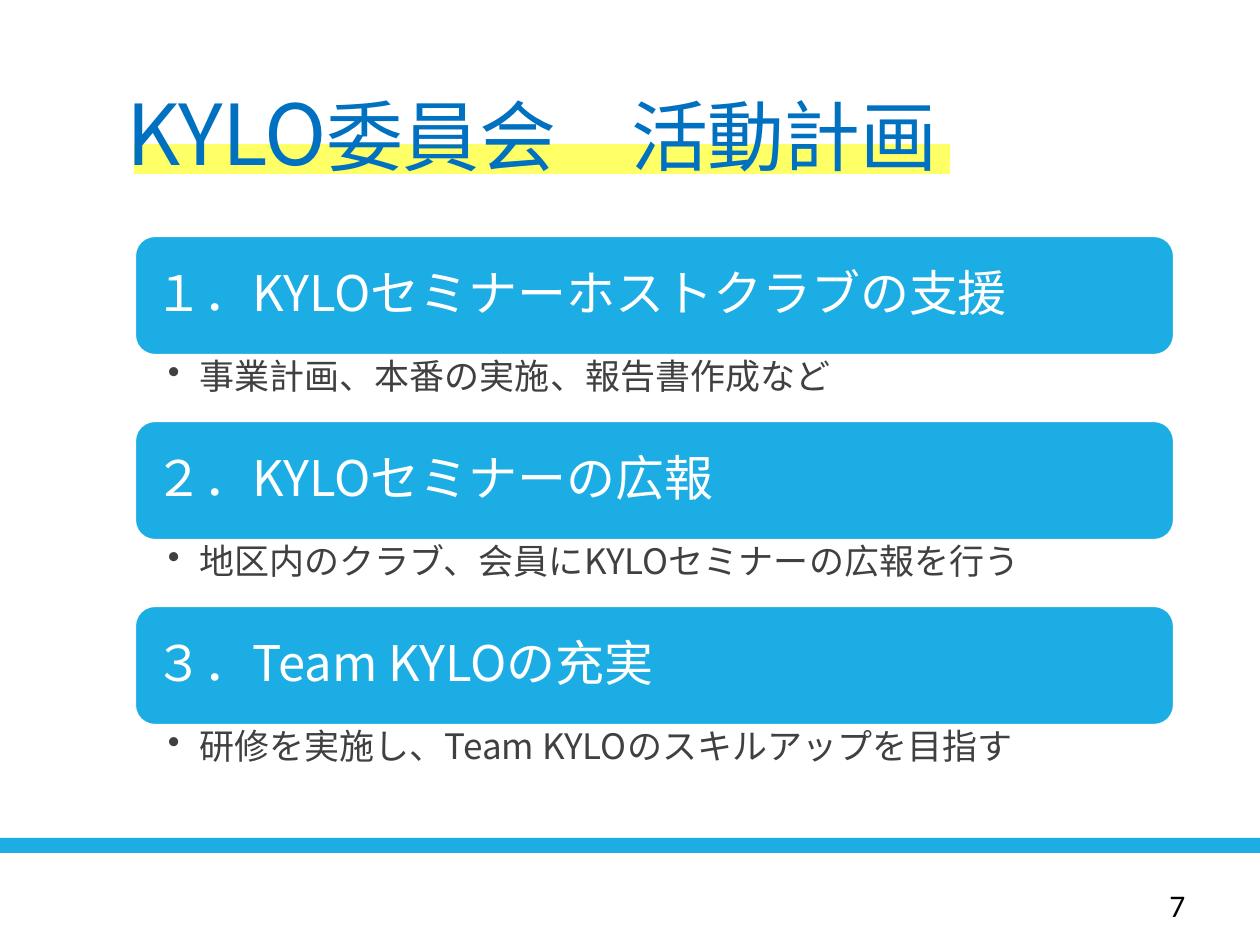
import pptx
import pptx.util
import pptx.dml.color
import pptx.enum.shapes
import pptx.enum.text
import pptx.oxml
import pptx.oxml.ns
import lxml.etree

RGB = pptx.dml.color.RGBColor
BLUE = RGB(0x1C, 0xAD, 0xE4)
NAVY = RGB(0x00, 0x70, 0xC0)
YELLOW = RGB(0xFF, 0xFF, 0x00)
WHITE = RGB(0xFF, 0xFF, 0xFF)
GRAY = RGB(0x40, 0x40, 0x40)
BLACK = RGB(0x00, 0x00, 0x00)
SANS = "Noto Sans CJK JP"
SHAPE = pptx.enum.shapes.MSO_SHAPE
ALIGN = pptx.enum.text.PP_ALIGN
MIDDLE = pptx.enum.text.MSO_ANCHOR.MIDDLE
qn = pptx.oxml.ns.qn


def px(*sizes):
    return [pptx.util.Emu(int(n * 914400 / 126)) for n in sizes]


def style(run, size, color, face=SANS):
    run.font.size = pptx.util.Pt(size)
    run.font.color.rgb = color
    run.font.name = face
    props = run.font._element
    lxml.etree.SubElement(props, qn("a:ea")).set("typeface", face)


deck = pptx.Presentation()
deck.slide_width, deck.slide_height = px(1260, 945)
slide = deck.slides.add_slide(deck.slide_layouts[5])
shapes = slide.shapes

band = shapes.add_shape(SHAPE.RECTANGLE, *px(0, 838, 1260, 15))
band.fill.solid()
band.fill.fore_color.rgb = BLUE
band.line.fill.background()
band.shadow.inherit = False

page = shapes.add_textbox(*px(1139, 880, 77, 50))
page.text_frame.word_wrap = True
line = page.text_frame.paragraphs[0]
line.text = "7"
line.alignment = ALIGN.CENTER
style(line.runs[0], 18, BLACK, "Calibri")

plans = [
    ("１．KYLOセミナーホストクラブの支援", "事業計画、本番の実施、報告書作成など"),
    ("２．KYLOセミナーの広報", "地区内のクラブ、会員にKYLOセミナーの広報を行う"),
    ("３．Team KYLOの充実", "研修を実施し、Team KYLOのスキルアップを目指す"),
]
for row, (head, note) in enumerate(plans):
    top = 236 + 185 * row
    card = shapes.add_shape(SHAPE.ROUNDED_RECTANGLE, *px(135, top, 1039, 119))
    card.fill.solid()
    card.fill.fore_color.rgb = BLUE
    card.line.color.rgb = WHITE
    card.line.width = pptx.util.Pt(1.25)
    card.shadow.inherit = False
    frame = card.text_frame
    frame.word_wrap = True
    frame.vertical_anchor = MIDDLE
    frame.margin_left, frame.margin_right = px(14, 14)
    line = frame.paragraphs[0]
    line.text = head
    line.alignment = ALIGN.LEFT
    line.line_spacing = 0.9
    style(line.runs[0], 28, WHITE)

    box = shapes.add_textbox(*px(135, top + 119, 1039, 64))
    frame = box.text_frame
    frame.word_wrap = True
    frame.margin_left, frame.margin_right = px(33, 20)
    frame.margin_top, frame.margin_bottom = px(4, 4)
    line = frame.paragraphs[0]
    line.text = note
    line.level = 1
    line.line_spacing = 0.9
    style(line.runs[0], 20, GRAY)
    props = line._p.get_or_add_pPr()
    props.set("marL", "228600")
    props.set("indent", "-228600")
    lxml.etree.SubElement(props, qn("a:buChar")).set("char", "•")

mark = shapes.add_shape(SHAPE.RECTANGLE, *px(134, 144, 816, 30))
mark.fill.solid()
mark.fill.fore_color.rgb = YELLOW
tint = mark.fill._xPr.find(".//" + qn("a:srgbClr"))
lxml.etree.SubElement(tint, qn("a:alpha")).set("val", "60000")
mark.line.fill.background()
mark.shadow.inherit = False

title = shapes.title
title.left, title.top, title.width, title.height = px(114, 40, 1040, 200)
frame = title.text_frame
frame.word_wrap = True
frame.vertical_anchor = MIDDLE
line = frame.paragraphs[0]
line.text = "KYLO"
line.add_run().text = "委員会　活動計画"
line.alignment = ALIGN.LEFT
line.line_spacing = 0.85
for run, size in zip(line.runs, (48, 44)):
    style(run, size, NAVY)
    run.font._element.set("spc", "-50")
shapes._spTree.append(title._element)

deck.save("out.pptx")
